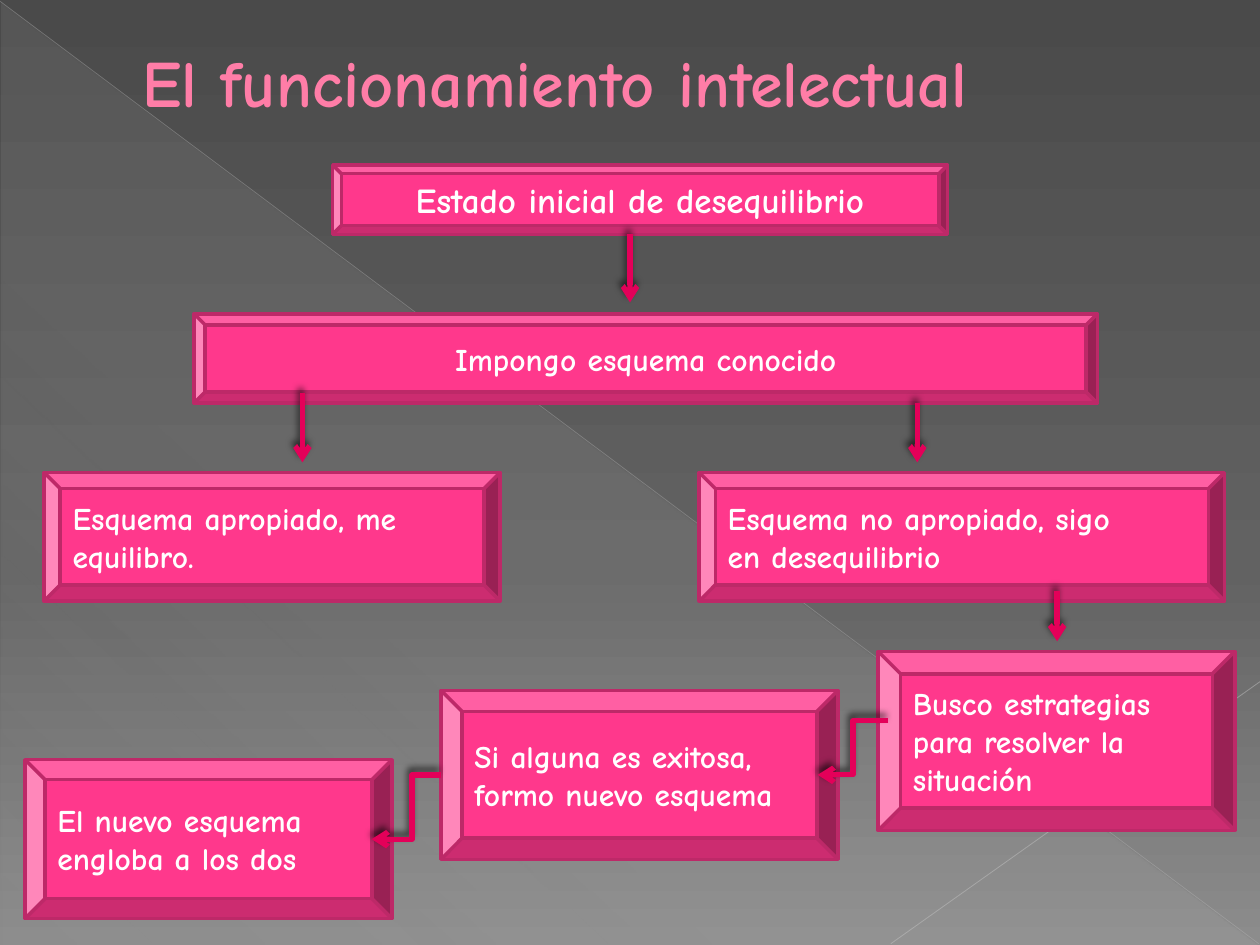
import pptx
import pptx.util
import pptx.dml.color
import pptx.enum.shapes
import pptx.enum.text
import pptx.oxml
import pptx.oxml.ns
from dataclasses import dataclass

Pt, Inches = pptx.util.Pt, pptx.util.Inches
RGB = pptx.dml.color.RGBColor.from_string
Kind = pptx.enum.shapes.MSO_SHAPE
Link = pptx.enum.shapes.MSO_CONNECTOR
Align = pptx.enum.text.PP_ALIGN
Anchor = pptx.enum.text.MSO_ANCHOR
qn = pptx.oxml.ns.qn
COLS, ROWS = 100, 75


def node(text):
    """Make one drawing element from its XML."""
    tag, rest = text[1:].split(" ", 1) if " " in text else (text[1:-2], "/>")
    return pptx.oxml.parse_xml(f"<{tag} {pptx.oxml.ns.nsdecls('a')} {rest}")


@dataclass(frozen=True)
class Theme:
    font: str = "Comic Neue"
    title: str = "FF7DA7"
    rim: str = "B12761"
    box: str = "FF388C"
    edge: str = "BD2968"
    arrow: str = "E40059"
    text: str = "FFFFFF"
    shade: str = "000000"
    ray: str = "BFBFBF"
    beam: str = "C6C6C6"
    back: tuple = ((0, "4A4A4A", 100), (60, "626262", 100), (100, "8C8C8C", 100))
    sheen: tuple = ((0, "D2D2D2", 10), (70, "D2D2D2", 8), (100, "D2D2D2", 1))
    head: float = 37.8
    lead: float = 20
    body: float = 18


class Deck:
    def __init__(self, theme):
        self.theme = theme
        self.file = pptx.Presentation()
        self.file.slide_width, self.file.slide_height = Inches(10), Inches(7.5)
        self.slide = self.file.slides.add_slide(self.file.slide_layouts[6])
        self.shapes = self.slide.shapes

    def grid(self, *spots):
        """Turn column, row, column, row ... into slide lengths."""
        wide, high = self.file.slide_width / COLS, self.file.slide_height / ROWS
        return [round(n * (high if i % 2 else wide)) for i, n in enumerate(spots)]

    def grade(self, fill, root, stops, angle):
        fill.gradient()
        grad = root.find(".//" + qn("a:gradFill"))
        items = grad.find(qn("a:gsLst"))
        for old in list(items):
            items.remove(old)
        for pos, color, alpha in stops:
            items.append(node(
                f'<a:gs pos="{pos * 1000}"><a:srgbClr val="{color}">'
                f'<a:alpha val="{alpha * 1000}"/></a:srgbClr></a:gs>'))
        grad.find(qn("a:lin")).set("ang", str(angle * 60000))

    def back(self):
        self.grade(self.slide.background.fill, self.slide.element, self.theme.back, 90)

    def sheen(self, *spot):
        shape = self.shapes.add_shape(Kind.RIGHT_TRIANGLE, *self.grid(*spot))
        shape.shadow.inherit = False
        shape.line.fill.background()
        self.grade(shape.fill, shape.element.spPr, self.theme.sheen, 133)

    def label(self, frame, lines, size, color, align):
        frame.word_wrap = True
        frame.vertical_anchor = Anchor.MIDDLE
        frame.text = lines
        for para in frame.paragraphs:
            para.alignment = align
            para.font.name, para.font.size, para.font.bold = self.theme.font, Pt(size), True
            para.font.color.rgb = RGB(color)

    def title(self, text, *spot):
        box = self.shapes.add_textbox(*self.grid(*spot))
        box.text_frame.margin_left = Inches(0.63)
        self.label(box.text_frame, text, self.theme.head, self.theme.title, Align.LEFT)
        box.element.find(".//" + qn("a:defRPr")).insert(0, node(
            f'<a:ln w="{Pt(0.5)}"><a:solidFill><a:srgbClr val="{self.theme.rim}"/>'
            '</a:solidFill></a:ln>'))

    def box(self, text, spot, size=None, align=Align.LEFT):
        shape = self.shapes.add_shape(Kind.BEVEL, *self.grid(*spot))
        shape.shadow.inherit = False
        shape.fill.solid()
        shape.fill.fore_color.rgb = RGB(self.theme.box)
        shape.line.color.rgb = RGB(self.theme.edge)
        shape.line.width = Pt(2)
        self.label(shape.text_frame, text, size or self.theme.body, self.theme.text, align)

    def stroke(self, kind, spot, color, width):
        line = self.shapes.add_connector(kind, *self.grid(*spot))
        line.line.color.rgb = RGB(color)
        line.line.width = Pt(width)
        line.element.spPr.append(node("<a:effectLst/>"))
        return line

    def ray(self, spot, color, width, alpha):
        line = self.stroke(Link.STRAIGHT, spot, color, width)
        tint = line.element.spPr.find(".//" + qn("a:srgbClr"))
        tint.append(node(f'<a:alpha val="{alpha * 1000}"/>'))

    def arrow(self, spot, bend=None):
        kind = Link.ELBOW if bend else Link.STRAIGHT
        line = self.stroke(kind, spot, self.theme.arrow, 3)
        props = line.element.spPr
        props.find(qn("a:ln")).append(node('<a:tailEnd type="arrow"/>'))
        props.find(qn("a:effectLst")).append(node(
            f'<a:outerShdw blurRad="{Pt(4)}" dist="{Pt(3)}" dir="{245 * 60000}" '
            f'rotWithShape="0"><a:srgbClr val="{self.theme.shade}">'
            '<a:alpha val="60000"/></a:srgbClr></a:outerShdw>'))
        if bend:
            props.find(".//" + qn("a:avLst")).append(node(
                f'<a:gd name="adj1" fmla="val {round(bend * 100000)}"/>'))


def main():
    theme = Theme()
    deck = Deck(theme)

    # Backdrop
    deck.back()
    deck.sheen(0.1, 0.2, 99.8, 74.8)
    deck.ray((0, 0.1, 99.9, 74.9), theme.ray, 0.39, 35)
    deck.ray((100, 54.1, 70.7, 74.9), theme.beam, 0.47, 45)

    # Title
    deck.title("El funcionamiento intelectual", 5, 2.9, 90, 7)

    # Centred steps
    deck.box("Estado inicial de desequilibrio", (26.4, 13.1, 48.8, 5.5),
             theme.lead, Align.CENTER)
    deck.box("Impongo esquema conocido", (15.4, 24.9, 71.7, 7.1), align=Align.CENTER)

    # Outcomes
    for text, *spot in (
        ("Esquema apropiado, me equilibro.", 3.5, 37.5, 36.2, 10.2),
        ("Esquema no apropiado, sigo\nen desequilibrio", 55.5, 37.5, 41.7, 10.2),
        ("Busco estrategias para resolver la situación", 69.7, 51.7, 28.3, 14.2),
        ("Si alguna es exitosa, formo nuevo esquema", 35, 54.8, 31.5, 13.4),
        ("El nuevo esquema engloba a los dos", 2, 60.3, 29.1, 12.6),
    ):
        deck.box(text, spot)

    # Arrows down: column, top row, bottom row
    for col, top, low in ((50, 18.6, 24), (24, 31.2, 36.7),
                          (72.8, 32, 36.7), (83.9, 46.9, 50.9)):
        deck.arrow((col, top, col, low))

    # Bent arrows to the left
    deck.arrow((70.5, 57.2, 64.9, 61.5), 0.5)
    deck.arrow((35, 61.5, 29.5, 66.6), 0.42)

    deck.file.save("out.pptx")


if __name__ == "__main__":
    main()
